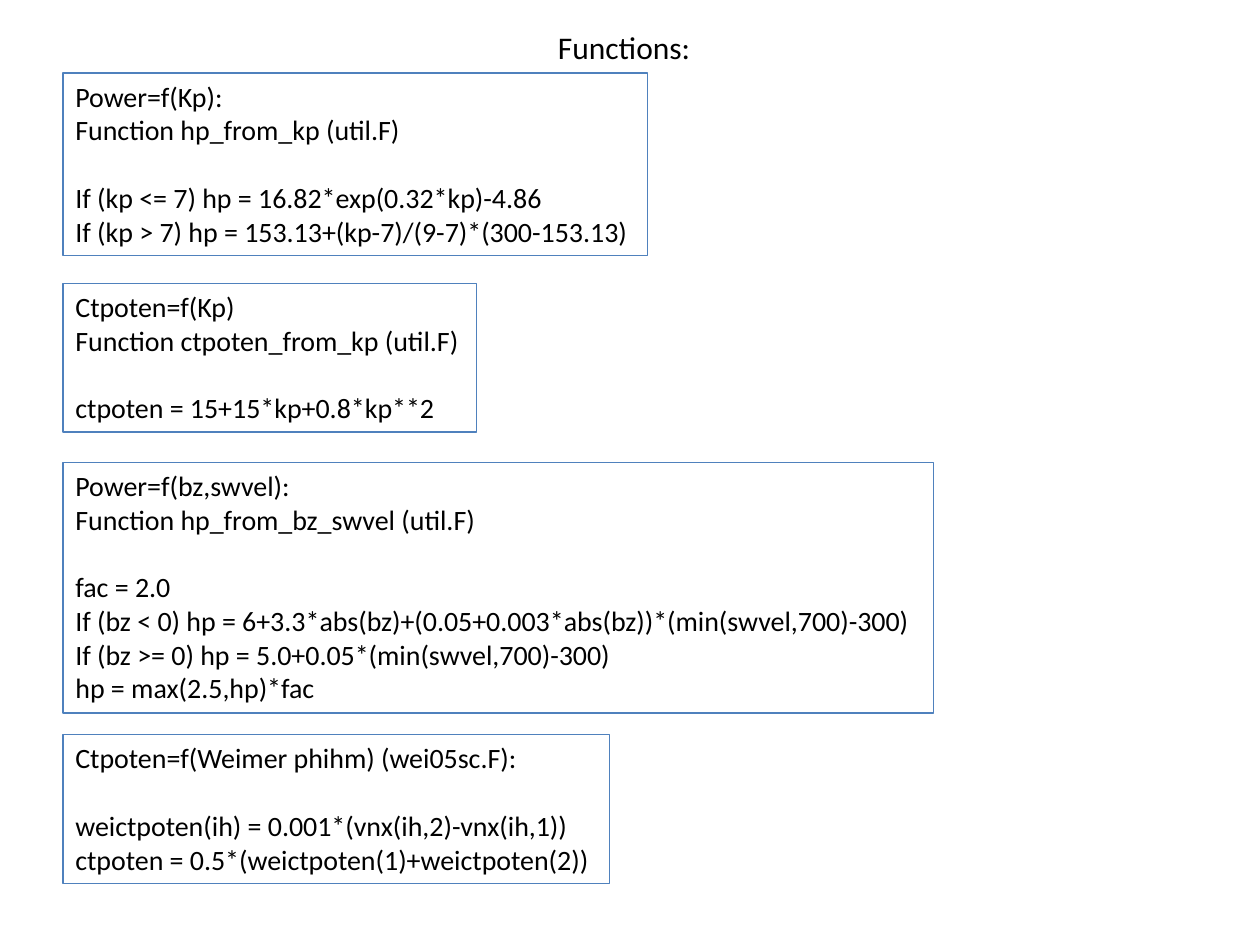
"""Build a slide listing the power and potential functions in outlined boxes."""
from dataclasses import dataclass

from pptx import Presentation
from pptx.dml.color import RGBColor
from pptx.enum.text import MSO_AUTO_SIZE
from pptx.slide import Slide
from pptx.util import Inches, Pt

FIT_SHAPE = MSO_AUTO_SIZE.SHAPE_TO_FIT_TEXT


@dataclass(frozen=True)
class Theme:
    font: str = "Calibri"
    text: RGBColor = RGBColor(0x00, 0x00, 0x00)
    outline: RGBColor = RGBColor(0x4F, 0x81, 0xBD)
    outline_width: Pt = Pt(0.75)
    title_size: Pt = Pt(18)
    body_size: Pt = Pt(16)
    section_gap: Pt = Pt(19.5)


@dataclass(frozen=True)
class FunctionBox:
    top: float
    width: float
    height: float
    heading: tuple[str, ...]
    formulas: tuple[str, ...]


THEME = Theme()
BOX_LEFT = 0.5
FUNCTION_BOXES = (
    FunctionBox(
        0.58, 4.64, 1.45,
        ("Power=f(Kp):", "Function hp_from_kp (util.F)"),
        ("If (kp <= 7) hp = 16.82*exp(0.32*kp)-4.86",
         "If (kp > 7) hp = 153.13+(kp-7)/(9-7)*(300-153.13)"),
    ),
    FunctionBox(
        2.25, 3.28, 1.18,
        ("Ctpoten=f(Kp)", "Function ctpoten_from_kp (util.F)"),
        ("ctpoten = 15+15*kp+0.8*kp**2",),
    ),
    FunctionBox(
        3.67, 6.91, 1.99,
        ("Power=f(bz,swvel):", "Function hp_from_bz_swvel (util.F)"),
        ("fac = 2.0",
         "If (bz < 0) hp = 6+3.3*abs(bz)+(0.05+0.003*abs(bz))*(min(swvel,700)-300)",
         "If (bz >= 0) hp = 5.0+0.05*(min(swvel,700)-300)",
         "hp = max(2.5,hp)*fac"),
    ),
    FunctionBox(
        5.83, 4.34, 1.18,
        ("Ctpoten=f(Weimer phihm) (wei05sc.F):",),
        ("weictpoten(ih) = 0.001*(vnx(ih,2)-vnx(ih,1))",
         "ctpoten = 0.5*(weictpoten(1)+weictpoten(2))"),
    ),
)


def add_text(page: Slide, left: float, top: float, width: float, height: float,
             lines: tuple[str, ...], size: Pt):
    box = page.shapes.add_textbox(
        Inches(left), Inches(top), Inches(width), Inches(height))
    frame = box.text_frame
    frame.word_wrap = False
    frame.auto_size = FIT_SHAPE
    frame.text = "\n".join(lines)
    for para in frame.paragraphs:
        para.font.name = THEME.font
        para.font.size = size
        para.font.color.rgb = THEME.text
    return box


def add_function_box(page: Slide, item: FunctionBox) -> None:
    box = add_text(page, BOX_LEFT, item.top, item.width, item.height,
                   item.heading + item.formulas, THEME.body_size)
    box.line.color.rgb = THEME.outline
    box.line.width = THEME.outline_width
    first_formula = box.text_frame.paragraphs[len(item.heading)]
    first_formula.space_before = THEME.section_gap


def main() -> None:
    deck = Presentation()
    deck.slide_width, deck.slide_height = Inches(10), Inches(7.5)
    page = deck.slides.add_slide(deck.slide_layouts[6])
    add_text(page, 4.33, 0.17, 1.27, 0.4, ("Functions:",), THEME.title_size)
    for item in FUNCTION_BOXES:
        add_function_box(page, item)
    deck.save("out.pptx")


if __name__ == "__main__":
    main()
